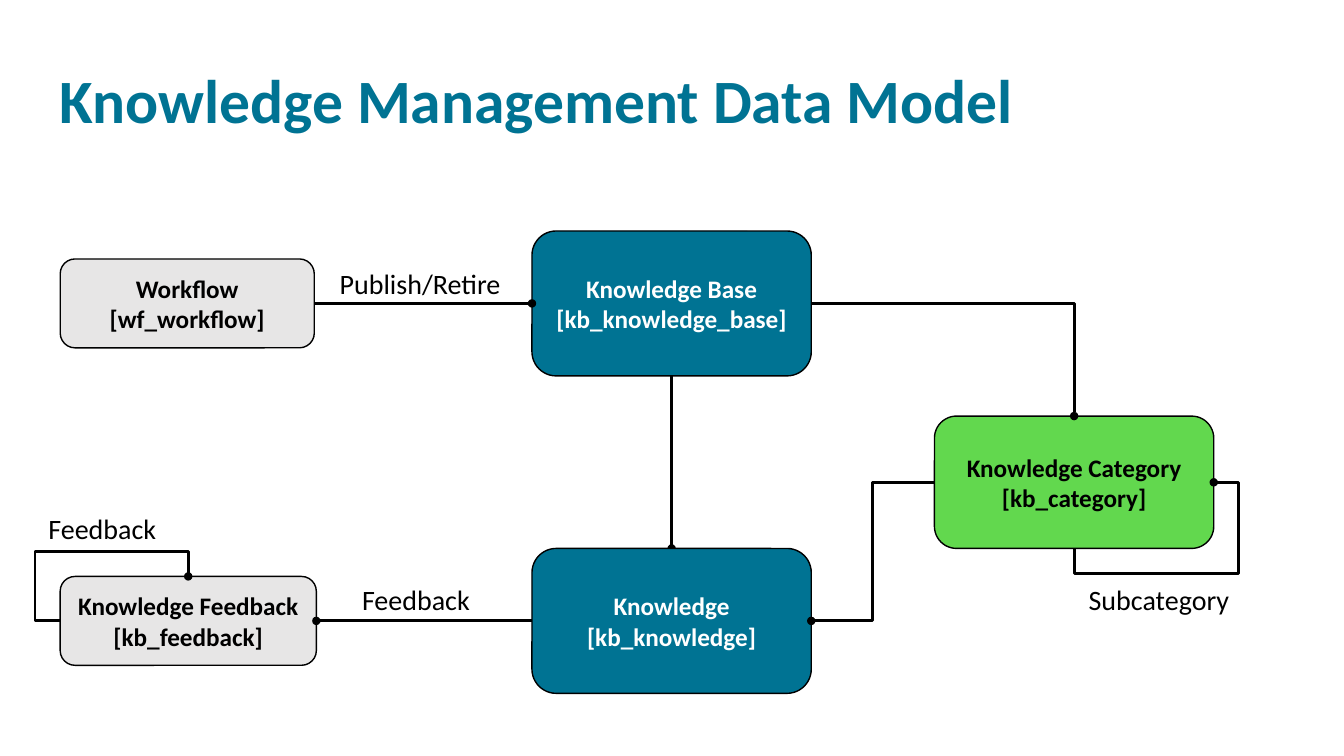
from lxml import etree
from pptx import Presentation
from pptx.dml.color import RGBColor
from pptx.enum.shapes import MSO_CONNECTOR, MSO_SHAPE
from pptx.enum.text import MSO_ANCHOR, PP_ALIGN
from pptx.oxml.ns import qn
from pptx.util import Pt

ROUND = MSO_SHAPE.ROUNDED_RECTANGLE
LINE, ELBOW = MSO_CONNECTOR.STRAIGHT, MSO_CONNECTOR.ELBOW
MIDDLE, TOP = MSO_ANCHOR.MIDDLE, MSO_ANCHOR.TOP
CENTER, LEFT = PP_ALIGN.CENTER, PP_ALIGN.LEFT
UP, WEST, DOWN, EAST = range(4)

COLORS = {
    "teal": "007393",
    "green": "62D84E",
    "gray": "E7E6E6",
    "black": "000000",
    "white": "FFFFFF",
}
ROW1, ROW2, ROW3 = 216.75, 344.5, 443.5
BIG, MID, SMALL = 103.5, 94.5, 63.5

TABLES = {
    "base": (["Knowledge Base", "[kb_knowledge_base]"], 380, ROW1, 199.5, BIG, "teal", "white"),
    "category": (["Knowledge Category", "[kb_category]"], 667.5, ROW2, 199.5, MID, "green", "black"),
    "knowledge": (["Knowledge", "[kb_knowledge]"], 380, ROW3, 199.5, BIG, "teal", "white"),
    "workflow": (["Workflow", "[wf_workflow]"], 43, ROW1, 181.5, SMALL, "gray", "black"),
    "feedback": (["Knowledge Feedback", "[kb_feedback]"], 43, ROW3, 183, SMALL, "gray", "black"),
}
LINKS = [
    ("knowledge", UP, "base", DOWN, LINE, None),
    ("knowledge", EAST, "category", WEST, ELBOW, None),
    ("category", UP, "base", EAST, ELBOW, ("bentConnector2", 270, "V", [])),
    ("category", EAST, "category", DOWN, ELBOW, ("bentConnector4", 0, "H", [-18000, 138200])),
    ("base", WEST, "workflow", EAST, LINE, None),
    ("feedback", EAST, "knowledge", WEST, LINE, None),
    ("feedback", UP, "feedback", WEST, ELBOW, ("bentConnector4", 270, "HV", [-56600, 119700])),
]
LABELS = [
    ("Publish/Retire", 235.5, 187, 131),
    ("Subcategory", 770.5, 412.5, 122.5),
    ("Feedback", 251.5, 412.5, 103.5),
    ("Feedback", 27.5, 362, 107.5),
]
TITLE = "Knowledge Management Data Model"
FORMATS = {
    "title": {"size": Pt(44), "bold": True},
    "table": {"size": Pt(18), "bold": True},
    "label": {"size": Pt(20), "bold": False},
}


def rgb(name):
    return RGBColor.from_string(COLORS[name])


def write(shape, lines, kind, color, align, anchor):
    frame = shape.text_frame
    frame.word_wrap = True
    frame.vertical_anchor = anchor
    frame.text = "\n".join(lines)
    for par in frame.paragraphs:
        par.alignment = align
        par.font.name = "Calibri"
        par.font.color.rgb = rgb(color)
        for key, value in FORMATS[kind].items():
            setattr(par.font, key, value)
    return frame


def label(text, left, top, width, height, kind, color):
    box = slide.shapes.add_textbox(Pt(left), Pt(top), Pt(width), Pt(height))
    return write(box, [text], kind, color, LEFT, TOP)


def table(lines, left, mid, width, height, fill, color):
    box = slide.shapes.add_shape(ROUND, Pt(left), Pt(mid - height / 2), Pt(width), Pt(height))
    box.shadow.inherit = False
    box.fill.solid()
    box.fill.fore_color.rgb = rgb(fill)
    box.line.color.rgb = rgb("black")
    box.line.width = Pt(1)
    write(box, lines, "table", color, CENTER, MIDDLE)
    return box


def bend(link, preset, turn, flips, values):
    x1, y1, x2, y2 = link.begin_x, link.begin_y, link.end_x, link.end_y
    width, height = abs(x2 - x1), abs(y2 - y1)
    if turn % 180:
        width, height = height, width
    link.left, link.top = (x1 + x2 - width) // 2, (y1 + y2 - height) // 2
    link.width, link.height = width, height
    props = link._element.spPr
    frame = props.find(qn("a:xfrm"))
    frame.set("rot", str(turn * 60000))
    for axis in "HV":
        frame.set("flip" + axis, str(int(axis in flips)))
    geom = props.find(qn("a:prstGeom"))
    geom.set("prst", preset)
    guides = geom.find(qn("a:avLst"))
    for num, value in enumerate(values, 1):
        etree.SubElement(guides, qn("a:gd"), name=f"adj{num}", fmla=f"val {value}")


def join(start, side1, end, side2, style, route):
    link = slide.shapes.add_connector(style, 0, 0, 0, 0)
    link.begin_connect(boxes[start], side1)
    link.end_connect(boxes[end], side2)
    link.line.color.rgb = rgb("black")
    link.line.width = Pt(2)
    props = link._element.spPr
    etree.SubElement(props.find(qn("a:ln")), qn("a:headEnd"), type="oval")
    etree.SubElement(props, qn("a:effectLst"))
    if route:
        bend(link, *route)
    return link


deck = Presentation()
deck.slide_width, deck.slide_height = Pt(960), Pt(540)
slide = deck.slides.add_slide(deck.slide_layouts[6])

head = label(TITLE, 35.5, 47, 762.5, 67.5, "title", "teal")
head.paragraphs[0].line_spacing = 0.9
boxes = {name: table(*data) for name, data in TABLES.items()}
links = [join(*data) for data in LINKS]
slide.shapes._spTree.insert(2, links[0]._element)
for text, left, top, width in LABELS:
    label(text, left, top, width, 31.5, "label", "black")

deck.save("out.pptx")
